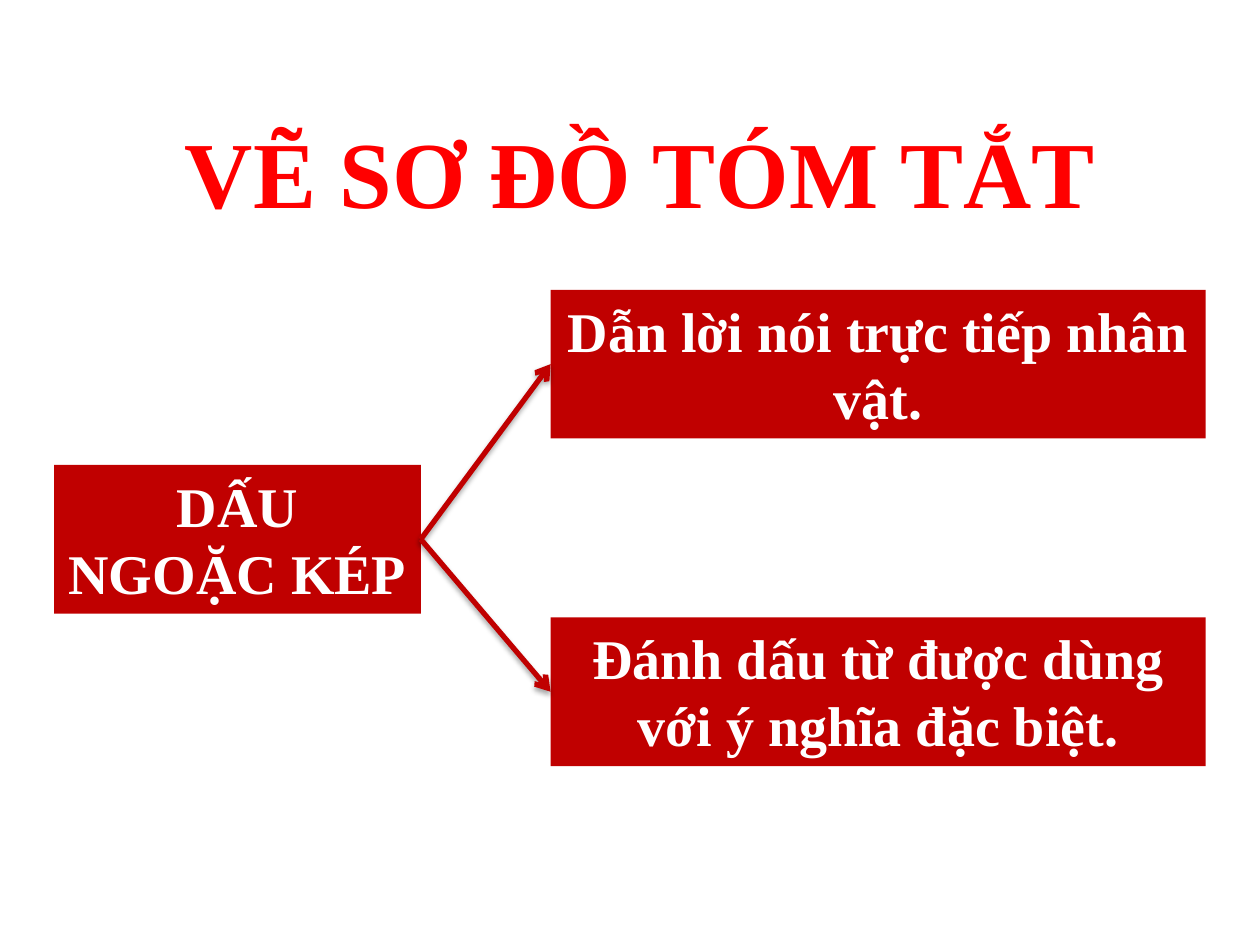
from dataclasses import dataclass

from lxml.etree import SubElement
from pptx import Presentation
from pptx.dml.color import RGBColor
from pptx.enum.shapes import MSO_CONNECTOR, MSO_SHAPE
from pptx.enum.text import MSO_ANCHOR, MSO_AUTO_SIZE, PP_ALIGN
from pptx.oxml.ns import qn
from pptx.util import Inches, Pt


@dataclass(frozen=True)
class Theme:
    font: str = "Times New Roman"
    title_color: RGBColor = RGBColor(0xFF, 0x00, 0x00)
    box_color: RGBColor = RGBColor(0xC0, 0x00, 0x00)
    box_text: RGBColor = RGBColor(0xFF, 0xFF, 0xFF)
    shadow: str = "000000"
    title_size: Pt = Pt(54)
    box_size: Pt = Pt(32)
    line_width: Pt = Pt(3)


class DiagramSlide:
    def __init__(self, prs, theme):
        self.theme = theme
        self.s = prs.slides.add_slide(prs.slide_layouts[6])

    def set_text(self, sp, text, size, color, anchor):
        tf = sp.text_frame
        tf.word_wrap = True
        tf.vertical_anchor = anchor
        p = tf.paragraphs[0]
        p.text = text
        p.alignment = PP_ALIGN.CENTER
        p.font.name = self.theme.font
        p.font.size = size
        p.font.bold = True
        p.font.color.rgb = color

    def title(self, text, x, y, w, h):
        sp = self.s.shapes.add_textbox(Inches(x), Inches(y), Inches(w), Inches(h))
        self.set_text(sp, text, self.theme.title_size, self.theme.title_color, MSO_ANCHOR.MIDDLE)

    def box(self, text, x, y, w, h=1.18):
        sp = self.s.shapes.add_shape(
            MSO_SHAPE.RECTANGLE, Inches(x), Inches(y), Inches(w), Inches(h)
        )
        sp.shadow.inherit = False
        sp.fill.solid()
        sp.fill.fore_color.rgb = self.theme.box_color
        sp.line.fill.background()
        self.set_text(sp, text, self.theme.box_size, self.theme.box_text, MSO_ANCHOR.TOP)
        sp.text_frame.auto_size = MSO_AUTO_SIZE.SHAPE_TO_FIT_TEXT
        return sp

    def arrow(self, source, target):
        line = self.s.shapes.add_connector(MSO_CONNECTOR.STRAIGHT, 0, 0, 0, 0)
        line.begin_connect(source, 3)
        line.end_connect(target, 1)
        line.line.color.rgb = self.theme.box_color
        line.line.width = self.theme.line_width
        props = line._element.spPr
        SubElement(props.find(qn("a:ln")), qn("a:tailEnd"), type="arrow")
        effects = SubElement(props, qn("a:effectLst"))
        shadow = SubElement(
            effects, qn("a:outerShdw"), blurRad=str(Pt(3.1)), dist=str(Pt(1.8)),
            dir="5400000", rotWithShape="0",
        )
        color = SubElement(shadow, qn("a:srgbClr"), val=self.theme.shadow)
        SubElement(color, qn("a:alpha"), val="35000")


def main():
    prs = Presentation()
    prs.slide_width, prs.slide_height = Inches(10), Inches(7.5)

    slide = DiagramSlide(prs, Theme())
    slide.title("VẼ SƠ ĐỒ TÓM TẮT", 0.58, 0.73, 9, 1.25)
    topic = slide.box("DẤU NGOẶC KÉP", 0.43, 3.69, 2.91)
    uses = [
        slide.box(text, 4.37, y, 5.2)
        for text, y in (
            ("Dẫn lời nói trực tiếp nhân vật.", 2.3),
            ("Đánh dấu từ được dùng với ý nghĩa đặc biệt.", 4.9),
        )
    ]
    for use in uses:
        slide.arrow(topic, use)

    prs.save("out.pptx")


if __name__ == "__main__":
    main()
